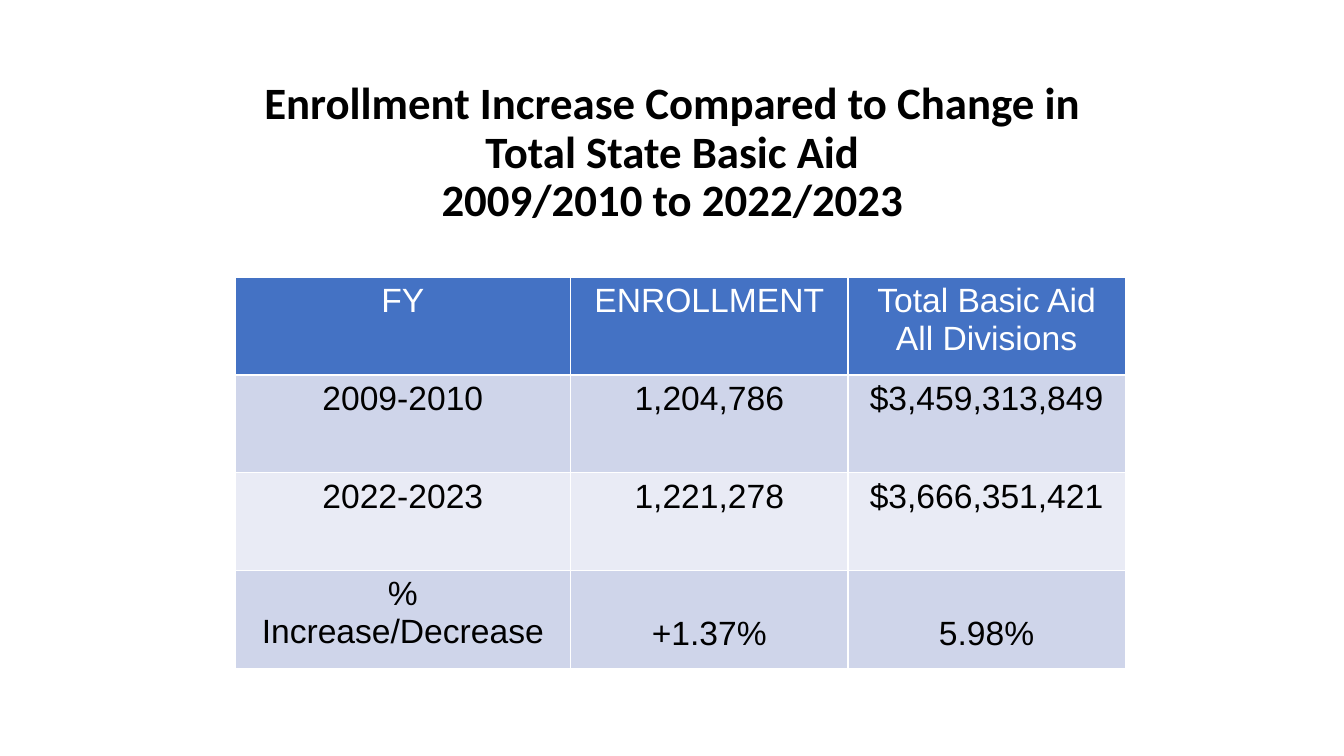
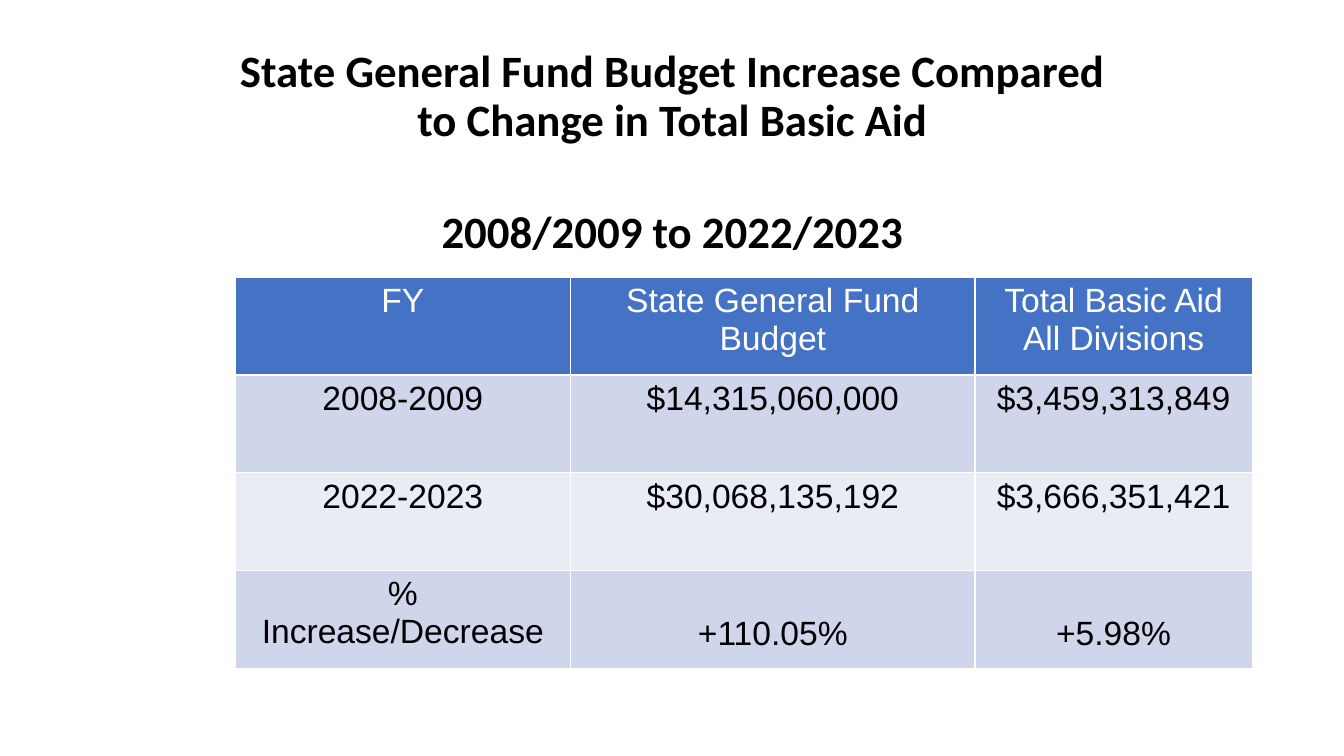
from dataclasses import dataclass

from pptx import Presentation
from pptx.dml.color import RGBColor as Color
from pptx.enum.text import MSO_ANCHOR as Anchor, MSO_AUTO_SIZE as Fit, PP_ALIGN as Align
from pptx.util import Inches, Pt


@dataclass(frozen=True)
class Theme:
    ink: str = "000000"
    paper: str = "FFFFFF"
    head: str = "4472C4"
    bands: tuple = ("CFD5EA", "E9EBF5")
    title_font: str = "Calibri"
    title_size: int = 32
    cell_font: str = "Arial"
    cell_size: int = 24


class Deck:
    """Hold the theme and current slide, and add styled elements."""

    def __init__(self, theme):
        self.theme = theme
        self.prs = Presentation()
        self.prs.slide_width, self.prs.slide_height = Inches(13.33), Inches(7.5)
        self.slide = None

    def add_slide(self):
        self.slide = self.prs.slides.add_slide(self.prs.slide_layouts[5])

    def style(self, frame, face, size, color, bold=False):
        for para in frame.paragraphs:
            para.alignment = Align.CENTER
            font = para.font
            font.name, font.size, font.bold = face, Pt(size), bold
            font.color.rgb = Color.from_string(color)

    def title(self, topic, years, gap=0):
        theme = self.theme
        box = self.slide.shapes.title
        box.left, box.top = Inches(2.17), Inches(0.3)
        box.width, box.height = Inches(9), Inches(2.45)
        frame = box.text_frame
        frame.text = f"{topic}\n{years}"
        frame.word_wrap, frame.auto_size = True, Fit.NONE
        frame.vertical_anchor = Anchor.MIDDLE
        self.style(frame, theme.title_font, theme.title_size, theme.ink, True)
        for para in frame.paragraphs:
            para.line_spacing = 0.9
        frame.paragraphs[-1].space_before = Pt(gap)

    def table(self, rows, widths):
        high = 0.97
        grid = self.slide.shapes.add_table(
            len(rows), len(widths), Inches(2.33), Inches(2.75),
            Inches(sum(widths)), Inches(high * len(rows))).table
        for col, width in zip(grid.columns, widths):
            col.width = Inches(width)
        for r, row in enumerate(rows):
            grid.rows[r].height = Inches(high)
            for c, text in enumerate(row):
                self.cell(grid.cell(r, c), text, r)
        for cell in list(grid.rows[len(rows) - 1].cells)[1:]:
            cell.vertical_anchor = Anchor.BOTTOM
            cell.margin_bottom = Inches(0.16)

    def cell(self, cell, text, row):
        theme = self.theme
        fill = theme.bands[(row - 1) % 2] if row else theme.head
        cell.fill.solid()
        cell.fill.fore_color.rgb = Color.from_string(fill)
        cell.text = text
        self.style(cell.text_frame, theme.cell_font, theme.cell_size,
                   theme.ink if row else theme.paper)


def main():
    deck = Deck(Theme())
    aid = "Total Basic Aid\nAll Divisions"
    change = "% Increase/Decrease"

    deck.add_slide()
    deck.title("Enrollment Increase Compared to Change in Total State Basic Aid",
               "2009/2010 to 2022/2023")
    deck.table([("FY", "ENROLLMENT", aid),
                ("2009-2010", "1,204,786", "$3,459,313,849"),
                ("2022-2023", "1,221,278", "$3,666,351,421"),
                (change, "+1.37%", "5.98%")], (3.33, 2.75, 2.75))

    deck.add_slide()
    deck.title("State General Fund Budget Increase Compared to Change in Total Basic Aid",
               "2008/2009 to 2022/2023", gap=46)
    deck.table([("FY", "State General Fund Budget", aid),
                ("2008-2009", "$14,315,060,000", "$3,459,313,849"),
                ("2022-2023", "$30,068,135,192", "$3,666,351,421"),
                (change, "+110.05%", "+5.98%")], (3.33, 4.01, 2.75))

    deck.prs.save("out.pptx")


if __name__ == "__main__":
    main()
